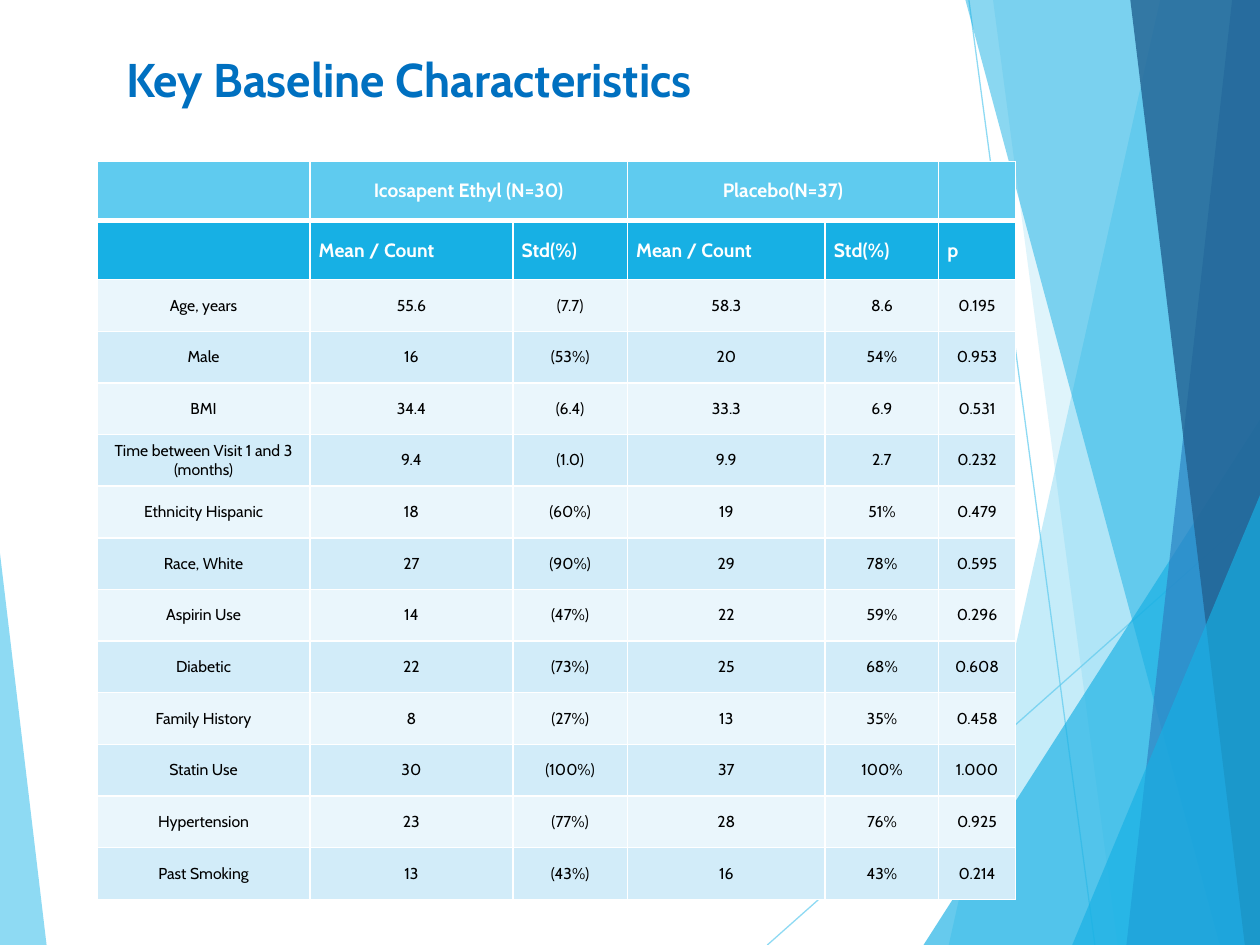
import pptx
import pptx.dml.color
import pptx.enum.shapes
import pptx.enum.text
import pptx.oxml.ns
import pptx.util
from lxml import etree

Inches = pptx.util.Inches
Pt = pptx.util.Pt
qn = pptx.oxml.ns.qn
PP_ALIGN = pptx.enum.text.PP_ALIGN
MSO_ANCHOR = pptx.enum.text.MSO_ANCHOR
MSO_SHAPE = pptx.enum.shapes.MSO_SHAPE

FONT = "Cabin"
WHITE, BLACK, TITLE_BLUE = "FFFFFF", "000000", "0070C0"
SKY, CYAN, BLUE, NAVY = "5FCBEF", "17B0E4", "2E83C3", "226292"
ROW_FILLS = ["EAF6FC", "D2ECF9"]

COLUMN_WIDTHS = [1.69, 1.61, 0.91, 1.57, 0.9, 0.61]
HEADER_HEIGHT, ROW_HEIGHT = 0.47, 0.41
GROUPS = ["", "Icosapent Ethyl (N=30)", "", "Placebo(N=37)", "", ""]
MEASURES = ["", "Mean / Count", "Std(%)", "Mean / Count", "Std(%)", "p"]
BASELINE = [
    ["Age, years", "55.6", "(7.7)", "58.3", "8.6", "0.195"],
    ["Male", "16", "(53%)", "20", "54%", "0.953"],
    ["BMI", "34.4", "(6.4)", "33.3", "6.9", "0.531"],
    ["Time between Visit 1 and 3 (months)", "9.4", "(1.0)", "9.9", "2.7", "0.232"],
    ["Ethnicity Hispanic", "18", "(60%)", "19", "51%", "0.479"],
    ["Race, White", "27", "(90%)", "29", "78%", "0.595"],
    ["Aspirin Use", "14", "(47%)", "22", "59%", "0.296"],
    ["Diabetic", "22", "(73%)", "25", "68%", "0.608"],
    ["Family History", "8", "(27%)", "13", "35%", "0.458"],
    ["Statin Use", "30", "(100%)", "37", "100%", "1.000"],
    ["Hypertension", "23", "(77%)", "28", "76%", "0.925"],
    ["Past Smoking", "13", "(43%)", "16", "43%", "0.214"],
]


def paint(fill, color, opacity=100):
    fill.solid()
    fill.fore_color.rgb = pptx.dml.color.RGBColor.from_string(color)
    if opacity < 100:
        clr = fill._xPr.find(".//" + qn("a:srgbClr"))
        etree.SubElement(clr, qn("a:alpha"), val=str(opacity * 1000))


def finish(sp, color, opacity):
    paint(sp.fill, color, opacity)
    sp.line.fill.background()
    sp.shadow.inherit = False


def add_run(p, text, size, color, bold=False):
    r = p.add_run()
    r.text = text
    r.font.name = FONT
    r.font.size = Pt(size)
    r.font.bold = bold
    paint(r.font.fill, color)


def add_ray(s, x1, y1, x2, y2):
    line = s.shapes.add_connector(
        pptx.enum.shapes.MSO_CONNECTOR.STRAIGHT,
        Inches(x1), Inches(y1), Inches(x2), Inches(y2))
    line.line.width = Pt(0.75)
    paint(line.line.fill, SKY, 70)
    etree.SubElement(line._element.spPr, qn("a:effectLst"))


def add_band(s, top_x, bottom_x, right, top, bottom, color, opacity):
    fb = s.shapes.build_freeform(Inches(top_x), Inches(top))
    corners = [(right, top), (right, bottom), (bottom_x, bottom)]
    fb.add_line_segments([(Inches(x), Inches(y)) for x, y in corners], close=True)
    finish(fb.convert_to_shape(), color, opacity)


def add_wedge(s, x, y, w, h, apex, color, opacity):
    sp = s.shapes.add_shape(MSO_SHAPE.ISOSCELES_TRIANGLE,
                            Inches(x), Inches(y), Inches(w), Inches(h))
    sp.adjustments[0] = apex
    finish(sp, color, opacity)


def add_facets(s, x, y, w, h):
    right, bottom, band_top = x + w, y + h, y - 0.01

    def band(top_inset, bottom_inset, color, opacity):
        add_band(s, right - top_inset, right - bottom_inset,
                 right, band_top, bottom, color, opacity)

    def right_wedge(width, height):
        add_wedge(s, right - width, bottom - height, width, height, 1, CYAN, 66)

    add_ray(s, right - 2.31, y, right - 1.31, bottom)
    add_ray(s, right, y + 4.03, right - 3.91, bottom)
    band(0.79, 2.47, SKY, 36)
    band(2.12, 1.13, SKY, 20)
    right_wedge(2.67, 4.17)
    band(2.34, 0.32, CYAN, 50)
    band(0.22, 1.06, BLUE, 70)
    band(1.03, 0.12, NAVY, 80)
    right_wedge(1.49, 3.57)
    add_wedge(s, x, bottom - 3.11, 0.37, 3.11, 0, SKY, 70)


def add_title(s, x, y, w, h):
    title = s.shapes.title
    s.shapes._spTree.append(title._element)
    title.left, title.top = Inches(x), Inches(y)
    title.width, title.height = Inches(w), Inches(h)
    tf = title.text_frame
    tf.word_wrap = True
    tf.vertical_anchor = MSO_ANCHOR.TOP
    p = tf.paragraphs[0]
    p.alignment = PP_ALIGN.LEFT
    add_run(p, "Key Baseline Characteristics", 27, TITLE_BLUE, True)


def set_borders(cell, top=1, bottom=1):
    tcPr = cell._tc.get_or_add_tcPr()
    for side, width in (("L", 1), ("R", 1), ("T", top), ("B", bottom)):
        ln = etree.SubElement(tcPr, qn("a:ln" + side), w=str(Pt(width)))
        solid = etree.SubElement(ln, qn("a:solidFill"))
        etree.SubElement(solid, qn("a:srgbClr"), val=WHITE)


def fill_row(table, i, values, fill, align, size, color, bold, margins, top=1, bottom=1):
    for j, text in enumerate(values):
        cell = table.cell(i, j)
        set_borders(cell, top, bottom)
        paint(cell.fill, fill)
        cell.vertical_anchor = MSO_ANCHOR.MIDDLE
        cell.margin_left = cell.margin_right = Inches(margins[0])
        cell.margin_top = cell.margin_bottom = Inches(margins[1])
        p = cell.text_frame.paragraphs[0]
        p.alignment = align
        if text:
            add_run(p, text, size, color, bold)


def add_baseline_table(s, x, y, w, h):
    heights = [HEADER_HEIGHT] * 2 + [ROW_HEIGHT] * len(BASELINE)
    table = s.shapes.add_table(len(heights), len(COLUMN_WIDTHS), Inches(x), Inches(y),
                               Inches(w), Inches(h)).table
    for col, width in zip(table.columns, COLUMN_WIDTHS):
        col.width = Inches(width)
    for row, height in zip(table.rows, heights):
        row.height = Inches(height)
    for j in (1, 3):
        table.cell(0, j).merge(table.cell(0, j + 1))
    header = (11, WHITE, True, (0.07, 0.04))
    fill_row(table, 0, GROUPS, SKY, PP_ALIGN.CENTER, *header, bottom=3)
    fill_row(table, 1, MEASURES, CYAN, PP_ALIGN.LEFT, *header, top=3)
    for i, values in enumerate(BASELINE):
        fill_row(table, i + 2, values, ROW_FILLS[i % 2], PP_ALIGN.CENTER,
                 9, BLACK, False, (0, 0))


def main():
    prs = pptx.Presentation()
    prs.slide_width, prs.slide_height = Inches(10), Inches(7.5)
    s = prs.slides.add_slide(prs.slide_layouts[5])
    add_facets(s, 0, 0, 10, 7.5)
    add_title(s, 0.9, 0.35, 9.52, 0.74)
    add_baseline_table(s, 0.77, 1.28, 7.28, 5.87)
    prs.save("out.pptx")


if __name__ == "__main__":
    main()
